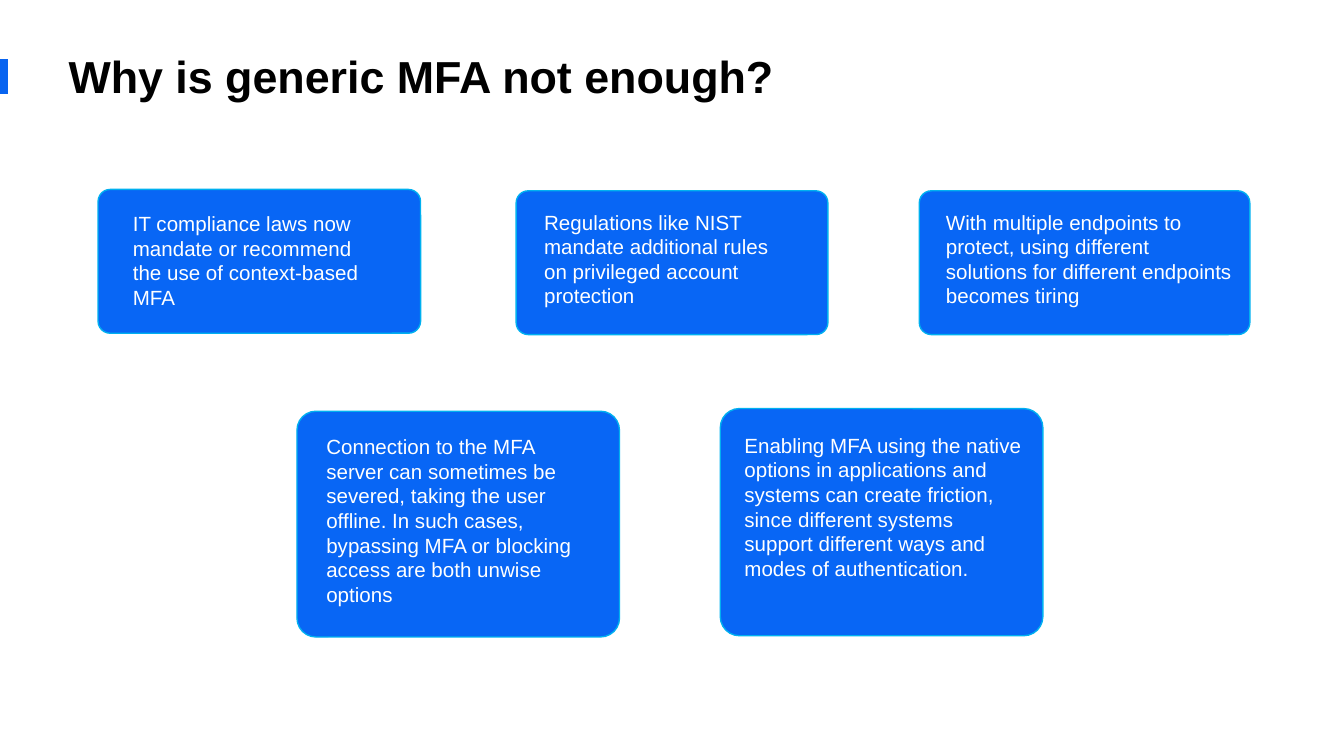
"""Build a slide of five reasons why generic MFA is not enough."""
from pptx import Presentation
from pptx import util as u
from pptx.dml.color import RGBColor
from pptx.enum import shapes, text

BLACK = RGBColor(0x00, 0x00, 0x00)
WHITE = RGBColor(0xFF, 0xFF, 0xFF)
ACCENT = RGBColor(0x08, 0x64, 0xF0)
CARD_FILL = RGBColor(0x08, 0x66, 0xF5)
CARD_LINE = RGBColor(0x00, 0xB0, 0xF0)
FONT = "Arial"
CORNER = 0.084

TITLE = "Why is generic MFA not enough?"
REASONS = [
    {"text": "IT compliance laws now mandate or recommend the use of context-based MFA",
     "card": (0.73, 1.41, 2.4, 1.07), "body": (0.89, 1.52, 2.08, 0.84)},
    {"text": "Regulations like NIST mandate additional rules on privileged account protection",
     "card": (3.84, 1.42, 2.32, 1.07), "body": (3.95, 1.51, 2.08, 0.97)},
    {"text": "With multiple endpoints to protect, using different solutions for different "
             "endpoints becomes tiring",
     "card": (6.84, 1.42, 2.46, 1.07), "body": (6.94, 1.51, 2.34, 0.84)},
    {"text": "Connection to the MFA server can sometimes be severed, taking the user offline. "
             "In such cases, bypassing MFA or blocking access are both unwise options",
     "card": (2.21, 3.06, 2.4, 1.68), "body": (2.33, 3.18, 2.16, 1.39)},
    {"text": "Enabling MFA using the native options in applications and systems can create "
             "friction, since different systems support different ways and modes of "
             "authentication.",
     "card": (5.36, 3.04, 2.4, 1.69), "body": (5.44, 3.17, 2.28, 1.45)},
]


def inches(box):
    return [u.Inches(value) for value in box]


def add_block(slide, kind, box, fill):
    shape = slide.shapes.add_shape(kind, *inches(box))
    shape.shadow.inherit = False
    shape.fill.solid()
    shape.fill.fore_color.rgb = fill
    shape.line.fill.background()
    return shape


def write(text_frame, wording, size, color, bold=False):
    text_frame.text = wording
    text_frame.word_wrap = True
    paragraph = text_frame.paragraphs[0]
    paragraph.alignment = text.PP_ALIGN.LEFT
    font = paragraph.runs[0].font
    font.name, font.size, font.bold = FONT, u.Pt(size), bold
    font.color.rgb = color


def add_title(slide):
    title = slide.shapes.title
    title.left, title.top, title.width, title.height = inches((0.41, 0.27, 8.33, 0.58))
    write(title.text_frame, TITLE, 24, BLACK, bold=True)
    title.text_frame.vertical_anchor = text.MSO_ANCHOR.MIDDLE


def add_reason(slide, reason):
    card = add_block(slide, shapes.MSO_SHAPE.ROUNDED_RECTANGLE, reason["card"], CARD_FILL)
    card.adjustments[0] = CORNER
    card.line.color.rgb = CARD_LINE
    card.line.width = u.Pt(0.75)
    body = slide.shapes.add_textbox(*inches(reason["body"]))
    write(body.text_frame, reason["text"], 11, WHITE)


def main():
    presentation = Presentation()
    presentation.slide_width = u.Inches(10)
    presentation.slide_height = presentation.slide_width * 9 // 16
    slide = presentation.slides.add_slide(presentation.slide_layouts.get_by_name("Title Only"))
    add_block(slide, shapes.MSO_SHAPE.RECTANGLE, (-0.01, 0.44, 0.07, 0.26), ACCENT)
    add_title(slide)
    for reason in REASONS:
        add_reason(slide, reason)
    presentation.save("out.pptx")


if __name__ == "__main__":
    main()
